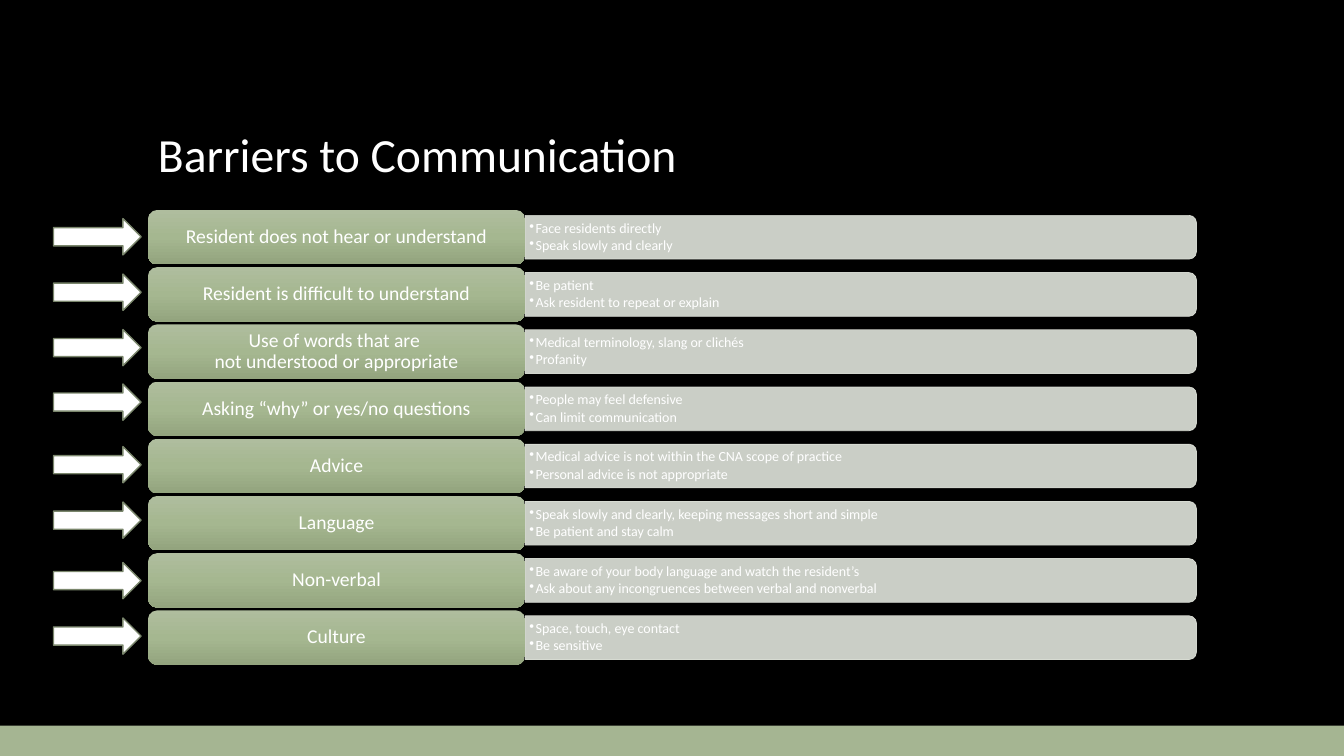
from lxml.etree import SubElement
from pptx import Presentation
from pptx.dml.color import RGBColor
from pptx.enum.shapes import MSO_SHAPE
from pptx.enum.text import MSO_ANCHOR, PP_ALIGN
from pptx.oxml.ns import qn
from pptx.util import Pt

# Content: barrier, two details, top of its arrow
TITLE = "Barriers to Communication"
BARRIERS = [
    ("Resident does not hear or understand",
     ["Face residents directly", "Speak slowly and clearly"], 156.2),
    ("Resident is difficult to understand",
     ["Be patient", "Ask resident to repeat or explain"], 195.8),
    ("Use of words that are \nnot understood or appropriate",
     ["Medical terminology, slang or clichés", "Profanity"], 235.4),
    ("Asking “why” or yes/no questions",
     ["People may feel defensive", "Can limit communication"], 274.3),
    ("Advice",
     ["Medical advice is not within the CNA scope of practice",
      "Personal advice is not appropriate"], 319),
    ("Language",
     ["Speak slowly and clearly, keeping messages short and simple",
      "Be patient and stay calm"], 358.6),
    ("Non-verbal",
     ["Be aware of your body language and watch the resident’s",
      "Ask about any incongruences between verbal and nonverbal"], 401.8),
    ("Culture", ["Space, touch, eye contact", "Be sensitive"], 441.4),
]

THEME = {
    "font": "Calibri",
    "title_size": 34, "label_size": 14, "detail_size": 10,
    "background": "000000", "text": "FFFFFF", "footer": "A5B592",
    "label_stops": [(0, "AFBD9E"), (50, "A5B790"), (100, "93A47E")],
    "detail": "E1E5DC", "detail_opacity": 90,
    "arrow": "FFFFFF", "arrow_line": "7A866C",
}

# Layout in points
SLIDE_W, SLIDE_H = 960, 540
FOOTER_H = 21.6
LABEL_X, LABEL_Y, LABEL_W, LABEL_H = 105.8, 150, 269.3, 38.9
ROW_PITCH = 40.86
DETAIL_X, DETAIL_W, DETAIL_H = LABEL_X + LABEL_W, 479.5, 31.2
DETAIL_TEXT_W, DETAIL_TEXT_H = 477.4, 28.1
ARROW_X, ARROW_W, ARROW_H = 38.2, 62.6, 25.9
BULLET_INDENT = 4.5


def color(name):
    return RGBColor.from_string(THEME[name])


def add_plain(kind, x, y, w, h, fill=None, line=None, line_width=1):
    shape = slide.shapes.add_shape(kind, Pt(x), Pt(y), Pt(w), Pt(h))
    shape.shadow.inherit = False
    if fill:
        shape.fill.solid()
        shape.fill.fore_color.rgb = color(fill)
    if line:
        shape.line.color.rgb = color(line)
        shape.line.width = Pt(line_width)
    else:
        shape.line.fill.background()
    return shape


def set_frame(frame, anchor, inset_x, inset_y):
    frame.word_wrap = True
    frame.vertical_anchor = anchor
    frame.margin_left = frame.margin_right = Pt(inset_x)
    frame.margin_top = frame.margin_bottom = Pt(inset_y)


def set_paragraph(paragraph, text, size, align=PP_ALIGN.LEFT):
    paragraph.text = text
    paragraph.alignment = align
    paragraph.line_spacing = 0.9
    paragraph.font.name = THEME["font"]
    paragraph.font.size = Pt(THEME[size])
    paragraph.font.color.rgb = color("text")


def add_bullet(paragraph):
    properties = paragraph._p.get_or_add_pPr()
    properties.set("marL", str(Pt(BULLET_INDENT)))
    properties.set("indent", str(-Pt(BULLET_INDENT)))
    SubElement(properties, qn("a:buChar")).set("char", "•")


def set_gradient(shape, stops):
    shape.fill.gradient()
    shape.fill.gradient_angle = 270
    stop_list = shape._element.spPr.find(".//" + qn("a:gsLst"))
    for old_stop in list(stop_list):
        stop_list.remove(old_stop)
    for position, rgb in stops:
        stop = SubElement(stop_list, qn("a:gs"), pos=str(position * 1000))
        SubElement(stop, qn("a:srgbClr"), val=rgb)


def set_opacity(shape, percent):
    for rgb in shape._element.spPr.iter(qn("a:srgbClr")):
        SubElement(rgb, qn("a:alpha"), val=str(percent * 1000))


def add_label(text, y):
    label = add_plain(MSO_SHAPE.ROUNDED_RECTANGLE, LABEL_X, y, LABEL_W, LABEL_H)
    set_gradient(label, THEME["label_stops"])
    set_frame(label.text_frame, MSO_ANCHOR.MIDDLE, 6, 3.8)
    set_paragraph(label.text_frame.paragraphs[0], text, "label_size", PP_ALIGN.CENTER)


def add_details(details, middle):
    # The bar is turned a quarter so that its round corners face right
    bar = add_plain(MSO_SHAPE.ROUND_2_SAME_RECTANGLE,
                    DETAIL_X + (DETAIL_W - DETAIL_H) / 2, middle - DETAIL_W / 2,
                    DETAIL_H, DETAIL_W, "detail", "detail", 0.5)
    bar.rotation = 90
    set_opacity(bar, THEME["detail_opacity"])

    box = slide.shapes.add_textbox(Pt(DETAIL_X), Pt(middle - DETAIL_TEXT_H / 2),
                                   Pt(DETAIL_TEXT_W), Pt(DETAIL_TEXT_H))
    frame = box.text_frame
    set_frame(frame, MSO_ANCHOR.MIDDLE, 3, 1.5)
    for index, detail in enumerate(details):
        paragraph = frame.add_paragraph() if index else frame.paragraphs[0]
        paragraph.level = 1
        add_bullet(paragraph)
        set_paragraph(paragraph, detail, "detail_size")
        paragraph.space_after = Pt(1.5)


presentation = Presentation()
presentation.slide_width, presentation.slide_height = Pt(SLIDE_W), Pt(SLIDE_H)
slide = presentation.slides.add_slide(presentation.slide_layouts[6])
slide.background.fill.solid()
slide.background.fill.fore_color.rgb = color("background")

# Footer band and title
add_plain(MSO_SHAPE.RECTANGLE, 0, SLIDE_H - FOOTER_H, SLIDE_W, FOOTER_H, "footer")
title = slide.shapes.add_textbox(Pt(LABEL_X), Pt(36.7), Pt(748.8), Pt(97.2))
set_frame(title.text_frame, MSO_ANCHOR.BOTTOM, 7.2, 3.6)
set_paragraph(title.text_frame.paragraphs[0], TITLE, "title_size")

# Barrier rows
for row, (barrier, details, arrow_y) in enumerate(BARRIERS):
    row_y = LABEL_Y + row * ROW_PITCH
    add_details(details, row_y + LABEL_H / 2)
    add_label(barrier, row_y)
    add_plain(MSO_SHAPE.RIGHT_ARROW, ARROW_X, arrow_y, ARROW_W, ARROW_H,
              "arrow", "arrow_line")

presentation.save("out.pptx")
